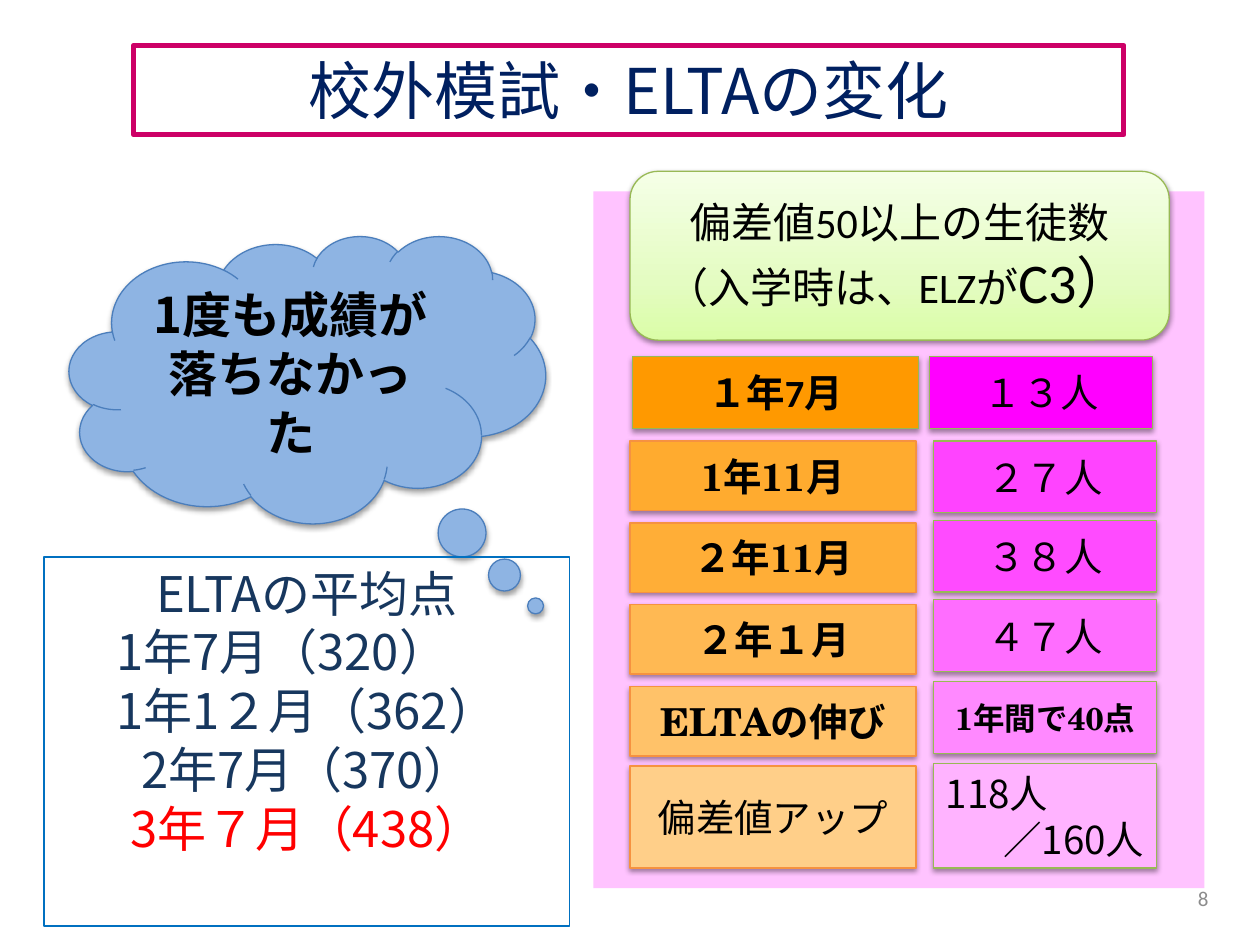
from lxml.etree import SubElement
from pptx import Presentation
from pptx.dml.color import RGBColor
from pptx.enum.shapes import MSO_SHAPE as Shape
from pptx.enum.text import MSO_ANCHOR as Anchor, PP_ALIGN as Align
from pptx.oxml import parse_xml
from pptx.oxml.ns import nsdecls, qn
from pptx.util import Inches, Pt

COLORS = {
    "black": "000000", "navy": "002060", "slate": "17375E", "red": "FF0000",
    "grey": "8C8C8C", "crimson": "CC0066", "blue": "0070C0",
    "cloud": "8EB4E3", "cloud_edge": "4B7EBC", "panel": "FFB3FF",
    "green_edge": "98B955", "orange_edge": "F69240",
}
NOTO, CALIBRI, SCHOLA = "Noto Sans CJK JP", "Calibri", "TeX Gyre Schola"
HEADER_GRADIENT = [(0, "DAFDA7"), (35, "E4FCC2"), (100, "F5FFE7")]

PERIODS = [
    ("１年7月", 5.02, 2.83, 2.27, 0.57, "FF9900", "green_edge", CALIBRI, True),
    ("1年11月", 5, 3.5, 2.27, 0.55, "FFAB2F", "orange_edge", SCHOLA, True),
    ("２年11月", 5, 4.15, 2.27, 0.55, "FFAE37", "orange_edge", SCHOLA, True),
    ("２年１月", 5, 4.8, 2.27, 0.55, "FFB953", "orange_edge", SCHOLA, True),
    ("ELTAの伸び", 5, 5.45, 2.27, 0.55, "FFC269", "orange_edge", SCHOLA, True),
    ("偏差値アップ", 5, 6.08, 2.27, 0.81, "FFCF89", "orange_edge", SCHOLA, False),
]
RESULTS = [
    ("１３人", 7.38, 2.83, 0.57, "FF00FF"),
    ("２７人", 7.41, 3.5, 0.57, "FF43FF"),
    ("３８人", 7.41, 4.13, 0.57, "FF4BFF"),
    ("４７人", 7.41, 4.76, 0.57, "FF6DFF"),
    ("1年間で40点", 7.41, 5.41, 0.57, "FF89FF"),
    ("118人", 7.41, 6.06, 0.83, "FFB3FF"),
]


def rgb(color):
    return RGBColor.from_string(COLORS.get(color, color))


def add_shadow(shape):
    effects = shape._element.spPr.find(qn("a:effectLst"))
    effects.append(parse_xml(
        f'<a:outerShdw {nsdecls("a")} blurRad="{Pt(3.1)}" dist="{Pt(1.6)}" '
        'dir="5400000" rotWithShape="0"><a:srgbClr val="000000">'
        '<a:alpha val="38000"/></a:srgbClr></a:outerShdw>'))


def add_box(shapes, kind, left, top, width, height, fill=None, edge=None,
            edge_width=0.75, shadow=False):
    box = shapes.add_shape(kind, Inches(left), Inches(top), Inches(width), Inches(height))
    box.shadow.inherit = False
    if fill:
        box.fill.solid()
        box.fill.fore_color.rgb = rgb(fill)
    else:
        box.fill.background()
    if edge:
        box.line.color.rgb = rgb(edge)
        box.line.width = Pt(edge_width)
    else:
        box.line.fill.background()
    if shadow:
        add_shadow(box)
    return box


def set_transparency(box, opacity):
    color = box._element.spPr.find(qn("a:solidFill")).find(qn("a:srgbClr"))
    SubElement(color, qn("a:alpha"), val=str(opacity * 1000))


def set_gradient(box, stops):
    stop_xml = "".join(f'<a:gs pos="{place * 1000}"><a:srgbClr val="{color}"/></a:gs>'
                       for place, color in stops)
    solid = box._element.spPr.find(qn("a:solidFill"))
    solid.getparent().replace(solid, parse_xml(
        f'<a:gradFill {nsdecls("a")} rotWithShape="1"><a:gsLst>{stop_xml}</a:gsLst>'
        '<a:lin ang="16200000" scaled="0"/></a:gradFill>'))


def start_text(box, anchor=Anchor.MIDDLE):
    frame = box.text_frame
    frame.word_wrap = True
    frame.vertical_anchor = anchor
    return frame


def add_run(paragraph, text, size, font=NOTO, color="black", bold=False, align=Align.CENTER):
    paragraph.alignment = align
    run = paragraph.add_run()
    run.text = text
    run.font.size = Pt(size)
    run.font.bold = bold
    run.font.name = font
    run.font.color.rgb = rgb(color)
    SubElement(run._r.get_or_add_rPr(), qn("a:ea"), typeface=NOTO)


def add_title(shapes):
    title = add_box(shapes, Shape.RECTANGLE, 1.06, 0.36, 7.86, 0.71, None, "crimson", 3)
    frame = start_text(title, Anchor.TOP)
    add_run(frame.paragraphs[0], "校外模試・ELTAの変化", 36, color="navy")


def add_cloud(shapes):
    cloud = add_box(shapes, Shape.CLOUD_CALLOUT, 0.55, 1.87, 3.78, 2.28,
                    "cloud", "cloud_edge", shadow=True)
    cloud.adjustments[0], cloud.adjustments[1] = 0.479, 0.789
    add_run(start_text(cloud).paragraphs[0], "1度も成績が落ちなかった", 28, bold=True)


def add_header(shapes):
    header = add_box(shapes, Shape.ROUNDED_RECTANGLE, 5, 1.36, 4.28, 1.34,
                     "panel", "green_edge", shadow=True)
    set_gradient(header, HEADER_GRADIENT)
    frame = start_text(header)
    frame.margin_top = frame.margin_bottom = Inches(0.04)
    add_run(frame.paragraphs[0], "偏差値50以上の生徒数", 24, CALIBRI)
    entry = frame.add_paragraph()
    add_run(entry, "（入学時は、ELZが", 24, CALIBRI)
    add_run(entry, "C3）", 32, CALIBRI)


def add_results_panel(slide):
    shapes = slide.shapes.add_group_shape().shapes
    panel = add_box(shapes, Shape.RECTANGLE, 4.71, 1.52, 4.85, 5.53, "panel")
    set_transparency(panel, 79)
    for label, left, top, width, height, fill, edge, font, bold in PERIODS:
        cell = add_box(shapes, Shape.RECTANGLE, left, top, width, height, fill, edge, shadow=True)
        add_run(start_text(cell).paragraphs[0], label, 22, font, bold=bold)
    for label, left, top, height, fill in RESULTS:
        cell = add_box(shapes, Shape.RECTANGLE, left, top, 1.77, height, fill,
                       "green_edge", shadow=True)
        frame = start_text(cell)
        if label == "118人":
            add_run(frame.paragraphs[0], label, 22, align=Align.LEFT)
            add_run(frame.add_paragraph(), "／160人", 22, align=Align.RIGHT)
        else:
            growth = label.startswith("1年間")
            add_run(frame.paragraphs[0], label, 18 if growth else 22, SCHOLA, bold=growth)
    add_header(shapes)


def add_averages(shapes):
    averages = add_box(shapes, Shape.RECTANGLE, 0.35, 4.42, 4.17, 2.93, None, "blue")
    frame = start_text(averages, Anchor.TOP)
    add_run(frame.paragraphs[0], "ELTAの平均点", 28, color="slate")
    for score, color in [("1年7月（320）　", "slate"), ("1年1２月（362）", "slate"),
                         ("2年7月（370）", "slate"), ("3年７月（438）", "red")]:
        add_run(frame.add_paragraph(), score, 28, color=color)


def add_page_number(shapes):
    number = shapes.add_textbox(Inches(7.36), Inches(6.93), Inches(2.33), Inches(0.4))
    add_run(start_text(number).paragraphs[0], "8", 12, CALIBRI, "grey", align=Align.RIGHT)


def main():
    deck = Presentation()
    deck.slide_width, deck.slide_height = Inches(10), Inches(7.5)
    slide = deck.slides.add_slide(deck.slide_layouts[6])
    add_page_number(slide.shapes)
    add_cloud(slide.shapes)
    add_title(slide.shapes)
    add_results_panel(slide)
    add_averages(slide.shapes)
    deck.save("out.pptx")


if __name__ == "__main__":
    main()
